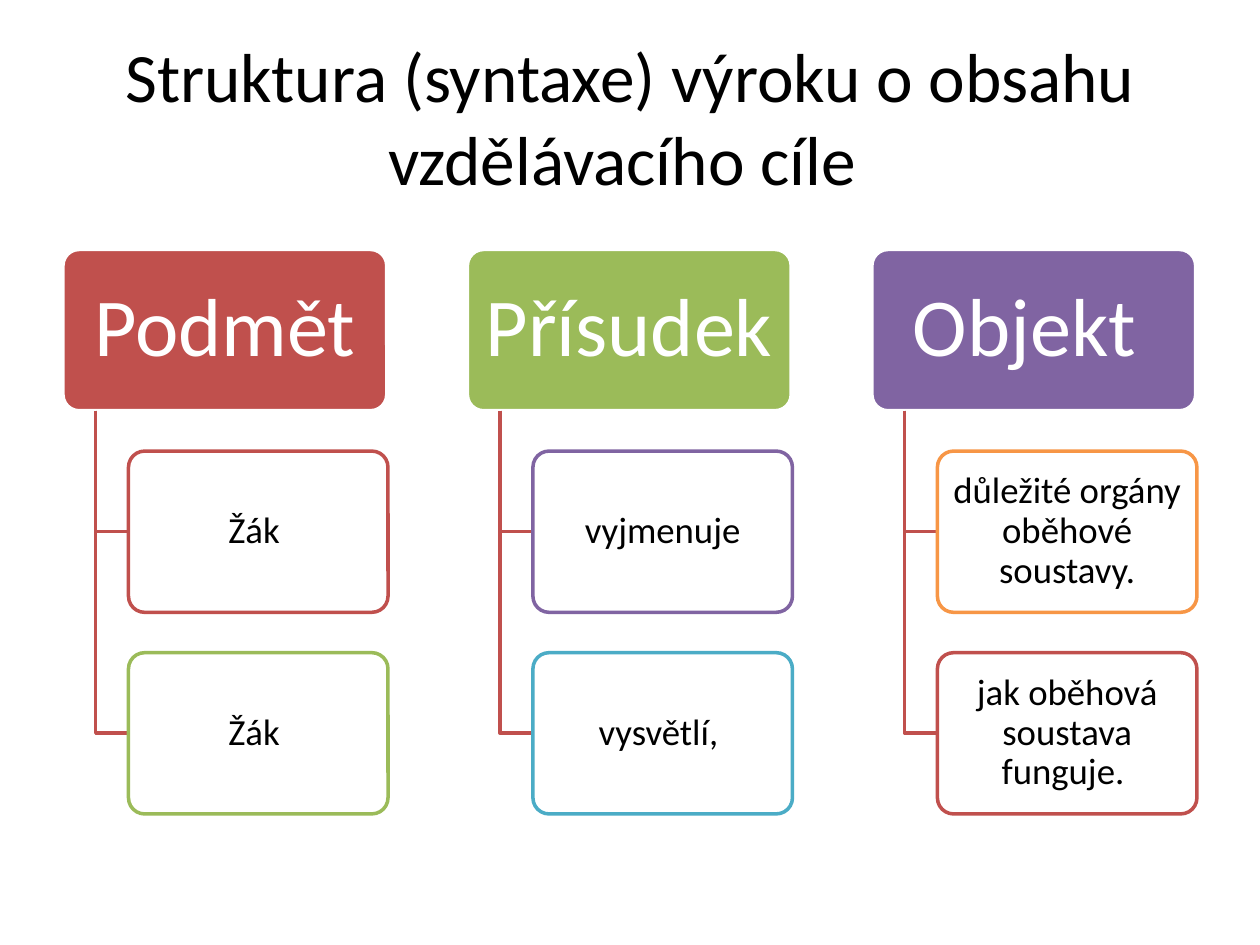
from pptx import Presentation
from pptx.dml.color import RGBColor
from pptx.enum.shapes import MSO_SHAPE
from pptx.enum.text import MSO_ANCHOR, PP_ALIGN
from pptx.oxml.ns import qn
from pptx.util import Inches, Pt
from lxml import etree


def color(hex_string):
    return RGBColor.from_string(hex_string)


def add_box(left, top, width, text, size, text_color, fill, line, insets):
    shape = slide.shapes.add_shape(
        MSO_SHAPE.ROUNDED_RECTANGLE,
        Inches(left), Inches(top), Inches(width), Inches(BOX_HEIGHT))
    shape.adjustments[0] = 0.1
    shape.shadow.inherit = False
    shape.fill.solid()
    shape.fill.fore_color.rgb = color(fill)
    shape.line.color.rgb = color(line)
    shape.line.width = Pt(2)
    frame = shape.text_frame
    frame.word_wrap = True
    frame.vertical_anchor = MSO_ANCHOR.MIDDLE
    frame.margin_left = frame.margin_right = Inches(insets[0])
    frame.margin_top = frame.margin_bottom = Inches(insets[1])
    frame.text = text
    paragraph = frame.paragraphs[0]
    paragraph.alignment = PP_ALIGN.CENTER
    paragraph.line_spacing = 0.9
    font = paragraph.runs[0].font
    font.name, font.size = "Calibri", Pt(size)
    font.color.rgb = color(text_color)
    return shape


BOX_HEIGHT = 1.28
HEADER_WIDTH, CHILD_WIDTH = 2.57, 2.06
FIRST_LEFT, FIRST_TOP = 0.5, 1.98
COLUMN_STEP, ROW_STEP = 3.21, 1.6
STEM_OFFSET, CHILD_OFFSET = 0.26, 0.52

# Header, header colour, then the boxes below with their outline colours
columns = [
    ("Podmět", "C0504D", [("Žák ", "C0504D"), ("Žák ", "9BBB59")]),
    ("Přísudek ", "9BBB59", [("vyjmenuje", "8064A2"), ("vysvětlí, ", "4BACC6")]),
    ("Objekt ", "8064A2", [("důležité orgány oběhové soustavy.", "F79646"),
                           ("jak oběhová soustava funguje. ", "C0504D")]),
]

presentation = Presentation()
presentation.slide_width, presentation.slide_height = Inches(10), Inches(7.5)
slide = presentation.slides.add_slide(presentation.slide_layouts[5])

# Title
title = slide.shapes.title
title.left, title.top = Inches(0.5), Inches(0.3)
title.width, title.height = Inches(9), Inches(1.25)
title.text_frame.text = "Struktura (syntaxe) výroku o obsahu vzdělávacího cíle "
title.text_frame.vertical_anchor = MSO_ANCHOR.MIDDLE
title_paragraph = title.text_frame.paragraphs[0]
title_paragraph.alignment = PP_ALIGN.CENTER
title_font = title_paragraph.runs[0].font
title_font.name, title_font.size = "Calibri", Pt(39.6)
title_font.color.rgb = color("000000")

# Columns: a header with two boxes hanging from it
for column, (header, header_color, children) in enumerate(columns):
    left = FIRST_LEFT + column * COLUMN_STEP
    add_box(left, FIRST_TOP, HEADER_WIDTH, header, 47, "FFFFFF",
            header_color, "FFFFFF", (0.08, 0.07))

    stem_left, child_left = left + STEM_OFFSET, left + CHILD_OFFSET
    stem_top = FIRST_TOP + BOX_HEIGHT
    for row, (text, outline) in enumerate(children, start=1):
        child_top = FIRST_TOP + row * ROW_STEP
        middle = child_top + BOX_HEIGHT / 2

        # Elbow from header to box
        builder = slide.shapes.build_freeform(Inches(stem_left), Inches(stem_top))
        builder.add_line_segments(
            [(Inches(stem_left), Inches(middle)),
             (Inches(child_left), Inches(middle))], close=False)
        elbow = builder.convert_to_shape()
        elbow.shadow.inherit = False
        elbow.fill.background()
        elbow.line.color.rgb = color("C0504D")
        elbow.line.width = Pt(2)

        # Box with a slightly transparent fill
        box = add_box(child_left, child_top, CHILD_WIDTH, text, 21, "000000",
                      "FFFFFF", outline, (0.04, 0.03))
        fill_color = box.element.spPr.find(qn("a:solidFill"))[0]
        etree.SubElement(fill_color, qn("a:alpha")).set("val", "90000")

presentation.save("out.pptx")
